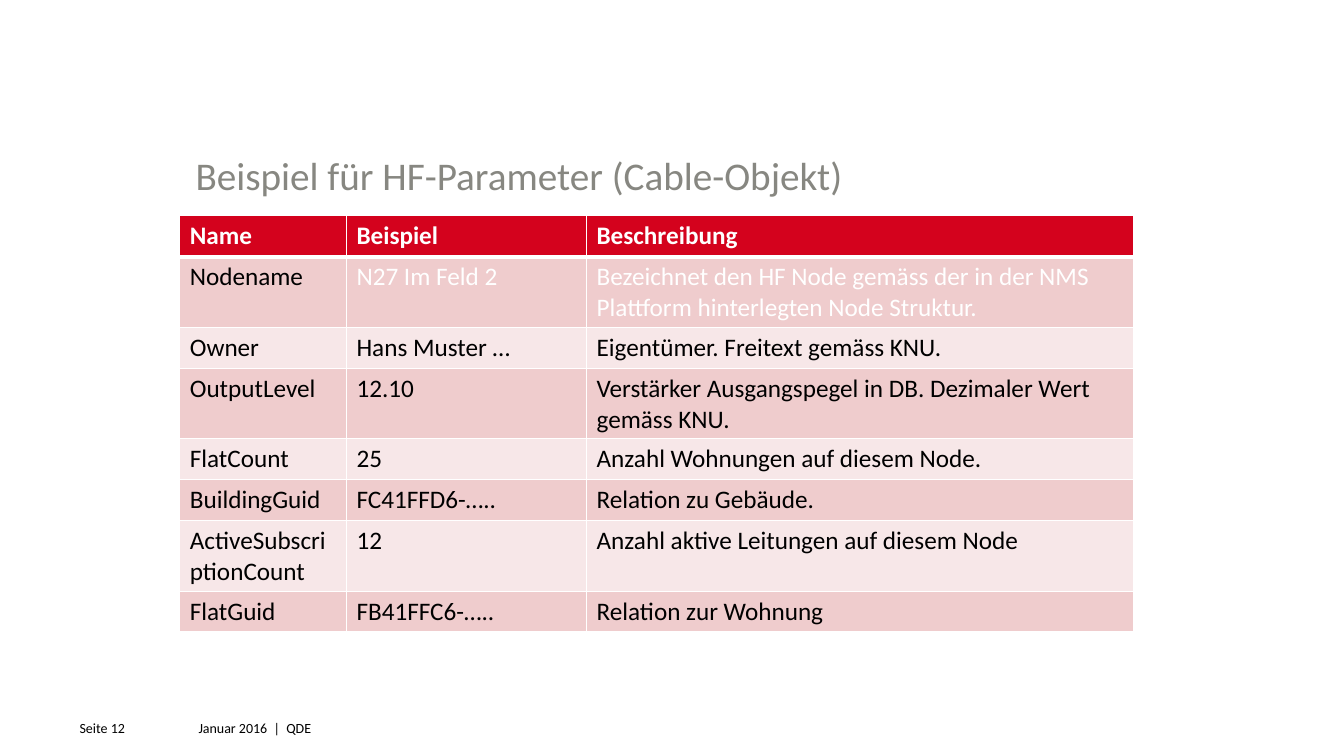
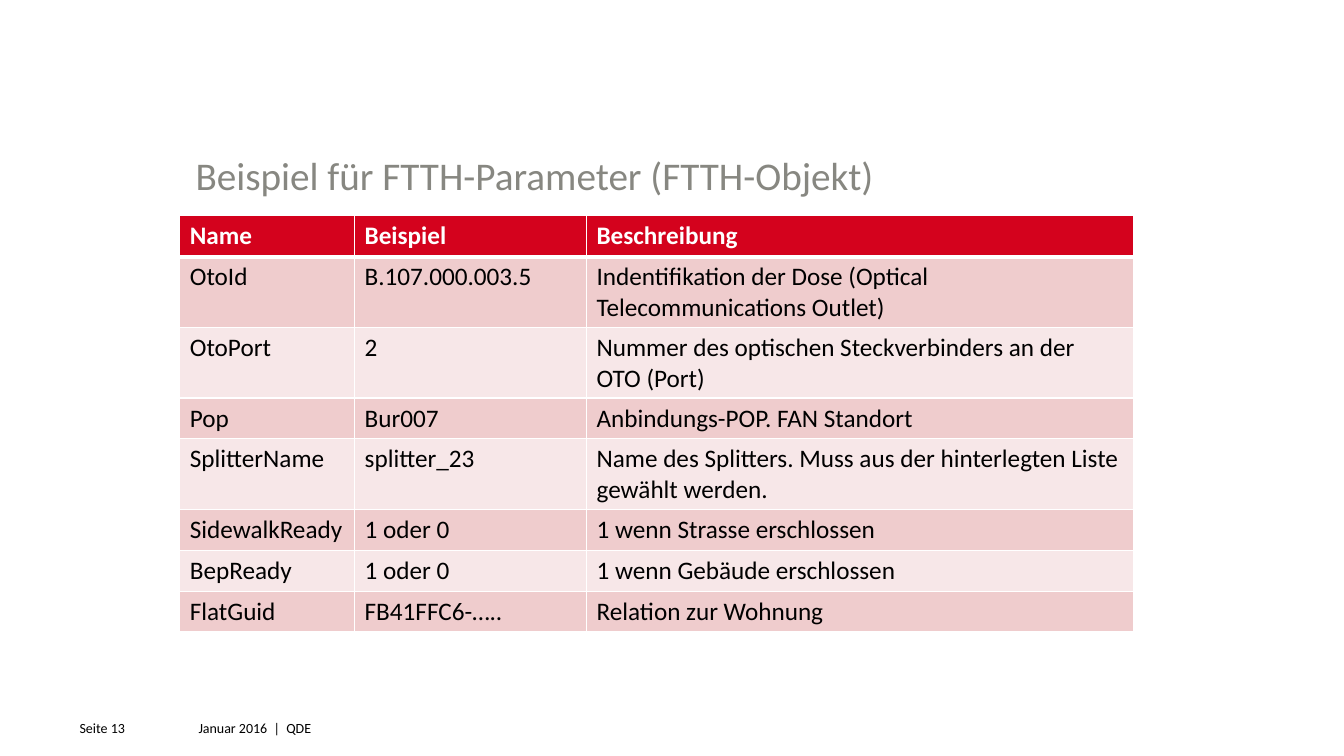
from dataclasses import dataclass

from lxml import etree
from pptx import Presentation
from pptx.dml.color import RGBColor
from pptx.oxml.ns import qn
from pptx.util import Pt


@dataclass(frozen=True)
class Theme:
    font: str = "Calibri"
    title_size: int = 28
    table_size: int = 18
    footer_size: int = 10
    grey: str = "878781"
    black: str = "000000"
    white: str = "FFFFFF"
    red: str = "D4021D"
    bands: tuple = ("EFCCCD", "F7E7E8")
    rule: int = 1
    header_rule: int = 3


THEME = Theme()
SLIDE_SIZE = (960, 540)
TITLE_BOX = (139.7, 111.6, 544.3, 33.8)
DATE_BOX = (141.8, 514.1, 542, 11.5)
PAGE_BOX = (56.9, 514.1, 72, 11.5)
TABLE_LEFT, TABLE_TOP, ROW_HEIGHT = 128.4, 154.2, 29.2

FOOTER = "Januar 2016  |  QDE"
FIRST_PAGE = 12
HEADINGS = ("Name", "Beispiel", "Beschreibung")

# "white_cells" lists (row, column) of body cells with white text
PAGES = [
    {
        "title": "Beispiel für HF-Parameter (Cable-Objekt)",
        "widths": (119.1, 171.5, 390.6),
        "white_cells": {(1, 1), (1, 2)},
        "parameters": [
            ("Nodename", "N27 Im Feld 2",
             "Bezeichnet den HF Node gemäss der in der NMS Plattform "
             "hinterlegten Node Struktur."),
            ("Owner", "Hans Muster …", "Eigentümer. Freitext gemäss KNU."),
            ("OutputLevel", "12.10",
             "Verstärker Ausgangspegel in DB. Dezimaler Wert gemäss KNU."),
            ("FlatCount", "25", "Anzahl Wohnungen auf diesem Node."),
            ("BuildingGuid", "FC41FFD6-…..", "Relation zu Gebäude."),
            ("ActiveSubscriptionCount", "12",
             "Anzahl aktive Leitungen auf diesem Node"),
            ("FlatGuid", "FB41FFC6-…..", "Relation zur Wohnung"),
        ],
    },
    {
        "title": "Beispiel für FTTH-Parameter (FTTH-Objekt)",
        "widths": (124.9, 165.7, 390.6),
        "white_cells": set(),
        "parameters": [
            ("OtoId", "B.107.000.003.5",
             "Indentifikation der Dose (Optical Telecommunications Outlet)"),
            ("OtoPort", "2",
             "Nummer des optischen Steckverbinders an der OTO (Port)"),
            ("Pop", "Bur007", "Anbindungs-POP. FAN Standort"),
            ("SplitterName", "splitter_23",
             "Name des Splitters. Muss aus der hinterlegten Liste gewählt "
             "werden."),
            ("SidewalkReady", "1 oder 0", "1 wenn Strasse erschlossen"),
            ("BepReady", "1 oder 0", "1 wenn Gebäude erschlossen"),
            ("FlatGuid", "FB41FFC6-…..", "Relation zur Wohnung"),
        ],
    },
]


def write(frame, content, size, color=THEME.black, bold=False, spacing=None):
    frame.word_wrap = True
    paragraph = frame.paragraphs[0]
    if spacing:
        paragraph.line_spacing = spacing
    run = paragraph.add_run()
    run.text = content
    run.font.name = THEME.font
    run.font.size = Pt(size)
    run.font.bold = bold
    run.font.color.rgb = RGBColor.from_string(color)


def add_label(slide, box, content, size, **style):
    frame = slide.shapes.add_textbox(*map(Pt, box)).text_frame
    frame.margin_left = frame.margin_right = 0
    frame.margin_top = frame.margin_bottom = 0
    write(frame, content, size, **style)


def set_borders(cell, top, bottom):
    """Draw white cell borders; the lines must precede the fill element."""
    properties = cell._tc.get_or_add_tcPr()
    sides = {"a:lnL": THEME.rule, "a:lnR": THEME.rule,
             "a:lnT": top, "a:lnB": bottom}
    for index, (side, width) in enumerate(sides.items()):
        line = etree.Element(qn(side), w=str(Pt(width)))
        fill = etree.SubElement(line, qn("a:solidFill"))
        etree.SubElement(fill, qn("a:srgbClr"), val=THEME.white)
        properties.insert(index, line)


def add_parameter_table(slide, page):
    rows = [HEADINGS, *page["parameters"]]
    widths = page["widths"]
    table = slide.shapes.add_table(
        len(rows), len(widths), Pt(TABLE_LEFT), Pt(TABLE_TOP),
        Pt(sum(widths)), Pt(ROW_HEIGHT * len(rows))).table
    for column, width in zip(table.columns, widths):
        column.width = Pt(width)
    for r, row in enumerate(rows):
        table.rows[r].height = Pt(ROW_HEIGHT)
        header = r == 0
        background = THEME.red if header else THEME.bands[(r - 1) % 2]
        top = THEME.header_rule if r == 1 else THEME.rule
        bottom = THEME.header_rule if header else THEME.rule
        for c, content in enumerate(row):
            cell = table.cell(r, c)
            cell.fill.solid()
            cell.fill.fore_color.rgb = RGBColor.from_string(background)
            set_borders(cell, top, bottom)
            white = header or (r, c) in page["white_cells"]
            write(cell.text_frame, content, THEME.table_size, bold=header,
                  color=THEME.white if white else THEME.black)


def main():
    deck = Presentation()
    deck.slide_width, deck.slide_height = map(Pt, SLIDE_SIZE)
    for number, page in enumerate(PAGES, FIRST_PAGE):
        slide = deck.slides.add_slide(deck.slide_layouts[6])
        add_label(slide, TITLE_BOX, page["title"], THEME.title_size,
                  color=THEME.grey, spacing=0.9)
        add_label(slide, DATE_BOX, FOOTER, THEME.footer_size)
        add_label(slide, PAGE_BOX, f"Seite {number}", THEME.footer_size)
        add_parameter_table(slide, page)
    deck.save("out.pptx")


if __name__ == "__main__":
    main()
